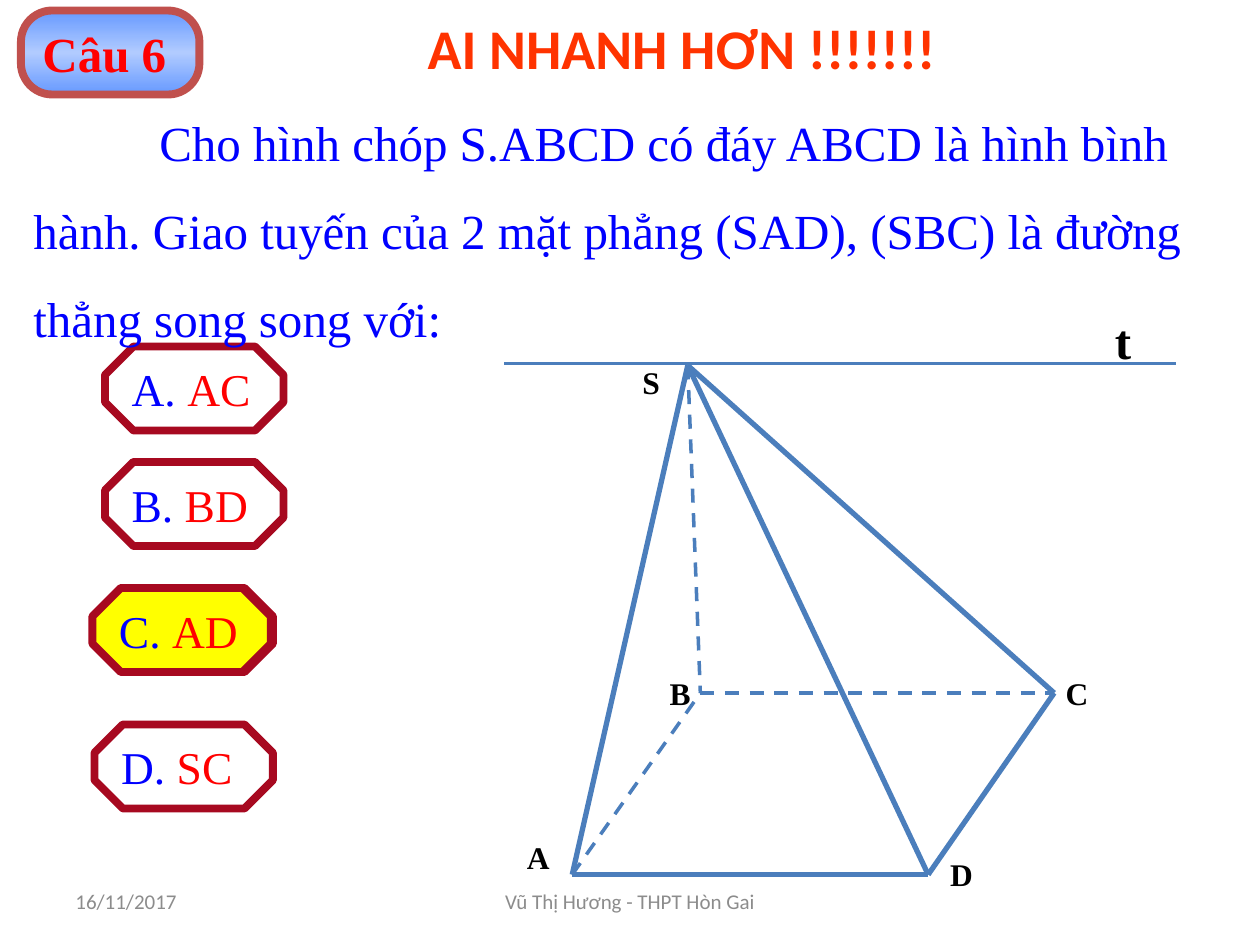
import copy

import pptx
import pptx.dml.color
import pptx.enum.dml
import pptx.enum.shapes
import pptx.enum.text
import pptx.oxml.ns
import pptx.util

RGBColor = pptx.dml.color.RGBColor
Align = pptx.enum.text.PP_ALIGN
Anchor = pptx.enum.text.MSO_ANCHOR
AutoSize = pptx.enum.text.MSO_AUTO_SIZE
Preset = pptx.enum.shapes.MSO_SHAPE

BLUE = RGBColor(0x00, 0x00, 0xFF)
RED = RGBColor(0xFF, 0x00, 0x00)
YELLOW = RGBColor(0xFF, 0xFF, 0x00)
BLACK = RGBColor(0x00, 0x00, 0x00)
GREY = RGBColor(0x8C, 0x8C, 0x8C)
ORANGE = RGBColor(0xFF, 0x33, 0x00)
DARK_RED = RGBColor(0xA7, 0x09, 0x20)
BADGE_LINE = RGBColor(0xC0, 0x50, 0x4D)
BADGE_EDGE = RGBColor(0x66, 0x99, 0xFF)
BADGE_MIDDLE = RGBColor(0xB1, 0xCB, 0xFF)
EDGE_BLUE = RGBColor(0x4B, 0x7E, 0xBC)

SERIF = "Times New Roman"
SANS = "Calibri"

# The slide is a grid of 120 columns by 90 rows
CELL = pptx.util.Inches(1 / 12)
BUTTON_SIZE = (17, 8)
LABEL_SIZE = (4.7, 3.2)

# Pyramid vertices and edges, in grid cells
VERTICES = {"S": (65.5, 34.8), "A": (54.5, 83.3), "B": (66.7, 66),
            "C": (100.4, 66), "D": (88.4, 83.3)}
HIDDEN_EDGES = ("BC", "AB", "SB")
VISIBLE_EDGES = ("AD", "DC", "SA", "SC", "SD")
LABELS = {"S": (60, 34), "A": (49, 79.2), "D": (89.3, 80.8),
          "B": (62.6, 63.6), "C": (100.3, 63.6)}


def cells(*values):
    return [round(value * CELL) for value in values]


def write(paragraph, text, name, size, color, bold=False):
    run = paragraph.add_run()
    run.text = text
    font_format = {"name": name, "size": pptx.util.Pt(size), "bold": bold}
    for attribute, value in font_format.items():
        setattr(run.font, attribute, value)
    run.font.color.rgb = color


def add_text(slide, box, text, name, size, color, bold=False,
             auto_size=AutoSize.SHAPE_TO_FIT_TEXT, anchor=Anchor.TOP,
             align=Align.LEFT):
    frame = slide.shapes.add_textbox(*cells(*box)).text_frame
    frame_format = {"word_wrap": True, "auto_size": auto_size,
                    "vertical_anchor": anchor}
    for attribute, value in frame_format.items():
        setattr(frame, attribute, value)
    paragraph = frame.paragraphs[0]
    paragraph.alignment = align
    write(paragraph, text, name, size, color, bold)
    return paragraph


def add_button(slide, preset, corner, left, top, line_color):
    shape = slide.shapes.add_shape(preset, *cells(left, top, *BUTTON_SIZE))
    shape.shadow.inherit = False
    shape.adjustments[0] = corner
    shape.line.color.rgb = line_color
    shape.line.width = pptx.util.Pt(4.5)
    shape.text_frame.word_wrap = False
    shape.text_frame.vertical_anchor = Anchor.MIDDLE
    shape.text_frame.paragraphs[0].alignment = Align.LEFT
    return shape


def add_answer(slide, left, top, letter, answer, fill=None):
    shape = add_button(slide, Preset.OCTAGON, 0.338, left, top, DARK_RED)
    if fill is None:
        shape.fill.background()
    else:
        shape.fill.solid()
        shape.fill.fore_color.rgb = fill
    paragraph = shape.text_frame.paragraphs[0]
    write(paragraph, f"{letter}. ", SERIF, 26, BLUE)
    write(paragraph, answer, SERIF, 26, RED)


def add_badge(slide, left, top, text):
    shape = add_button(slide, Preset.ROUNDED_RECTANGLE, 0.372, left, top,
                       BADGE_LINE)
    shape.fill.gradient()
    shape.fill.gradient_angle = 90
    # The default gradient has two stops; a third one is needed
    stop_list = shape._element.spPr.find(
        ".//" + pptx.oxml.ns.qn("a:gsLst"))
    stop_list.append(copy.deepcopy(stop_list[-1]))
    colors = (BADGE_EDGE, BADGE_MIDDLE, BADGE_EDGE)
    for index, (stop, color) in enumerate(
            zip(shape.fill.gradient_stops, colors)):
        stop.position = index / 2
        stop.color.rgb = color
    write(shape.text_frame.paragraphs[0], text, SERIF, 28, RED, True)


def add_line(slide, start, end, width, dashed=False):
    connector = slide.shapes.add_connector(
        pptx.enum.shapes.MSO_CONNECTOR.STRAIGHT, *cells(*start, *end))
    connector.line.color.rgb = EDGE_BLUE
    connector.line.width = pptx.util.Pt(width)
    if dashed:
        connector.line.dash_style = pptx.enum.dml.MSO_LINE.DASH
    properties = connector._element.spPr
    properties.append(pptx.oxml.parse_xml(
        f"<a:effectLst {pptx.oxml.ns.nsdecls('a')}/>"))


def add_title(slide, text):
    title = slide.shapes.title
    title.left, title.top, title.width, title.height = cells(
        32, 0.7, 65.9, 10.3)
    title.text_frame.auto_size = AutoSize.NONE
    title.text_frame.vertical_anchor = Anchor.TOP
    paragraph = title.text_frame.paragraphs[0]
    paragraph.alignment = Align.CENTER
    write(paragraph, text, SANS, 32, ORANGE, True)


def add_question(slide, text):
    paragraph = add_text(slide, (2, 7.3, 118, 26.6), text, SERIF, 28, BLUE)
    paragraph.line_spacing = 1.5
    first_line_indent = pptx.util.Inches(1)
    paragraph._p.get_or_add_pPr().set("indent", str(first_line_indent))


def add_pyramid(slide):
    for edges, width, dashed in ((HIDDEN_EDGES, 2, True),
                                 (VISIBLE_EDGES, 3, False)):
        for start, end in edges:
            add_line(slide, VERTICES[start], VERTICES[end], width, dashed)
    for letter, corner in LABELS.items():
        add_text(slide, (*corner, *LABEL_SIZE), letter, SERIF, 18, BLACK,
                 True)


def add_footer(slide, left, width, text, align):
    add_text(slide, (left, 83.4, width, 4.8), text, SANS, 12, GREY,
             auto_size=AutoSize.NONE, anchor=Anchor.MIDDLE, align=align)


def main():
    presentation = pptx.Presentation()
    presentation.slide_width = 120 * CELL
    presentation.slide_height = 90 * CELL
    title_only = presentation.slide_layouts[5]
    slide = presentation.slides.add_slide(title_only)

    # Heading and answers; the right answer has a second, yellow button
    add_title(slide, "AI NHANH HƠN !!!!!!!")
    add_badge(slide, 2, 1, "Câu 6")
    for left, top, letter, answer, fill in (
            (10, 33, "A", "AC", None), (10, 44, "B", "BD", None),
            (9, 56, "C", "AD", None), (8.8, 56, "C", "AD", YELLOW),
            (9, 69, "D", "SC", None)):
        add_answer(slide, left, top, letter, answer, fill)
    add_question(slide, "Cho hình chóp S.ABCD có đáy ABCD là hình bình hành. "
                        "Giao tuyến của 2 mặt phẳng (SAD), (SBC) là đường "
                        "thẳng song song với:")

    # Line t through the apex, and the pyramid
    add_line(slide, (48, 34.6), (112, 34.6), 2)
    add_text(slide, (105, 29, 6.1, 6.8), "t", SERIF, 28, BLACK, True)
    add_pyramid(slide)

    # Footer
    add_footer(slide, 6, 28, "16/11/2017", Align.LEFT)
    add_footer(slide, 41, 38, "Vũ Thị Hương - THPT Hòn Gai", Align.CENTER)

    presentation.save("out.pptx")


if __name__ == "__main__":
    main()
